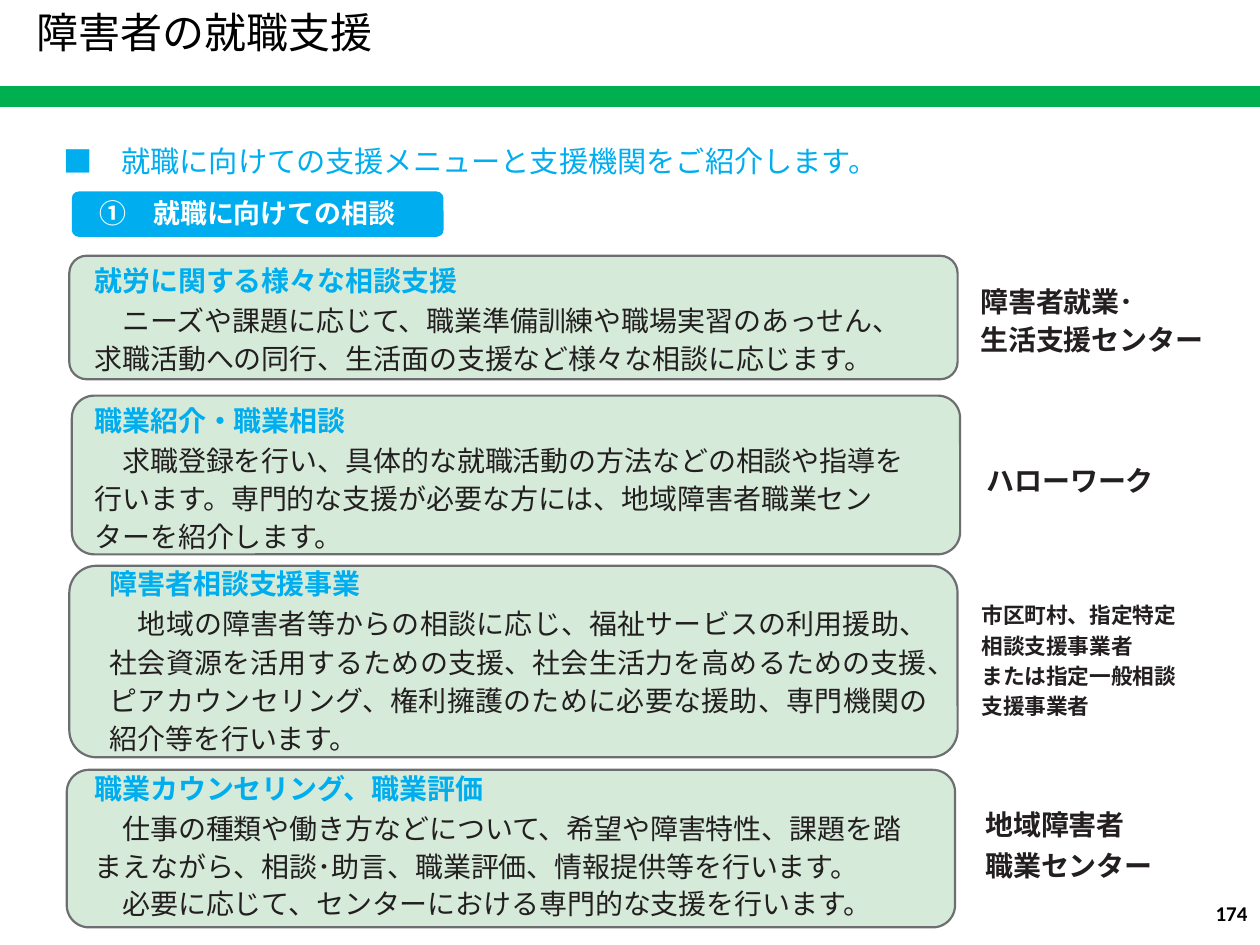
from lxml import etree
from pptx import Presentation
from pptx.dml.color import RGBColor
from pptx.enum.lang import MSO_LANGUAGE_ID
from pptx.enum.shapes import MSO_SHAPE
from pptx.enum.text import MSO_ANCHOR, MSO_AUTO_SIZE, PP_ALIGN
from pptx.oxml.ns import qn
from pptx.util import Inches, Pt

RECT, ROUND = MSO_SHAPE.RECTANGLE, MSO_SHAPE.ROUNDED_RECTANGLE
LEFT, RIGHT, JUSTIFY = PP_ALIGN.LEFT, PP_ALIGN.RIGHT, PP_ALIGN.JUSTIFY
TOP, GROW = MSO_ANCHOR.TOP, MSO_AUTO_SIZE.SHAPE_TO_FIT_TEXT
JAPANESE = MSO_LANGUAGE_ID.JAPANESE
FONT = "Noto Sans CJK JP"
BLUE, GREEN, PALE, GRAY, INK = "00AEEF", "00B050", "D5EAD8", "6D6E71", "231F20"

# Panels: box, text box, alignment, heading, body paragraphs
PANELS = [
    ((0.55, 2.03, 7.05, 0.98), (0.74, 2.03, 6.62, 0.96), LEFT,
     "就労に関する様々な相談支援",
     ["　ニーズや課題に応じて、職業準備訓練や職場実習のあっせん、求職活動への同行、"
      "生活面の支援など様々な相談に応じます。"]),
    ((0.57, 3.14, 7.05, 1.26), (0.74, 3.14, 6.51, 1.26), LEFT,
     "職業紹介・職業相談",
     ["　求職登録を行い、具体的な就職活動の方法などの相談や指導を行います。"
      "専門的な支援が必要な方には、地域障害者職業センターを紹介します。"]),
    ((0.55, 4.49, 7.05, 1.52), (0.86, 4.44, 6.51, 1.57), JUSTIFY,
     "障害者相談支援事業",
     ["　地域の障害者等からの相談に応じ、福祉サービスの利用援助、"
      "社会資源を活用するための支援、社会生活力を高めるための支援、"
      "ピアカウンセリング、権利擁護のために必要な援助、専門機関の紹介等を行います。"]),
    ((0.53, 6.11, 7.05, 1.25), (0.74, 6.06, 6.51, 1.25), LEFT,
     "職業カウンセリング、職業評価",
     ["　仕事の種類や働き方などについて、希望や障害特性、課題を踏まえながら、"
      "相談･助言、職業評価、情報提供等を行います。",
      "　必要に応じて、センターにおける専門的な支援を行います。"]),
]

# Agencies: text box, top inset, size, line spacing, (line, space before)
AGENCIES = [
    ((7.77, 2.22, 1.91, 0.61), 0.04, 16, 1,
     [("障害者就業･", 3.2), ("生活支援センター", 2.3)]),
    ((7.82, 3.67, 1.67, 0.28), 0.01, 16, 1, [("ハローワーク", 0.9)]),
    ((7.78, 4.73, 1.86, 0.99), 0.01, 12.4, 1.16,
     [("市区町村、指定特定", 0.9), ("相談支援事業者", 0.9),
      ("または指定一般相談", 0), ("支援事業者", 0)]),
    ((7.81, 6.36, 1.67, 0.65), 0.01, 16, 1.16,
     [("地域障害者", 0.9), ("職業センター", 0.9)]),
]


def color(value):
    return RGBColor.from_string(value)


def place(sp, box):
    sp.left, sp.top, sp.width, sp.height = map(Inches, box)


def add_box(s, kind, box, fill, line=None, width=1, radius=None):
    sp = s.shapes.add_shape(kind, *map(Inches, box))
    sp.shadow.inherit = False
    sp.fill.solid()
    sp.fill.fore_color.rgb = color(fill)
    if line:
        sp.line.color.rgb = color(line)
        sp.line.width = Pt(width)
    else:
        sp.line.fill.background()
    if radius is not None:
        sp.adjustments[0] = radius


def setup_frame(sp, top=0.01):
    tf = sp.text_frame
    tf.word_wrap = True
    tf.auto_size = GROW
    tf.vertical_anchor = TOP
    tf.margin_left = tf.margin_right = tf.margin_bottom = 0
    tf.margin_top = Inches(top)
    return tf


def add_text_box(s, box, top=0.01):
    return setup_frame(s.shapes.add_textbox(*map(Inches, box)), top)


def add_line(tf, text, size, rgb, bold=False, before=0, spacing=1,
             indent=0.01, align=LEFT, font=FONT):
    p = tf.paragraphs[0]
    if p.runs:
        p = tf.add_paragraph()
    p.alignment = align
    p.space_before = Pt(before)
    p.line_spacing = spacing
    # Plain indent, no bullet
    pPr = p._p.get_or_add_pPr()
    pPr.set("marL", str(Inches(indent)))
    pPr.set("indent", "0")
    etree.SubElement(pPr, qn("a:buNone"))
    r = p.add_run()
    r.text = text
    r.font.name = font
    r.font.size = Pt(size)
    r.font.bold = bold
    r.font.color.rgb = color(rgb)
    r.font.language_id = JAPANESE
    # East Asian typeface follows the Latin one
    etree.SubElement(r._r.get_or_add_rPr(), qn("a:ea"), typeface=font)


def add_panel(s, box, text_box, align, heading, body):
    add_box(s, ROUND, box, PALE, GRAY, 1.25, 0.141)
    tf = add_text_box(s, text_box, 0.06)
    add_line(tf, heading, 16, BLUE, True, 4.3)
    add_line(tf, body[0], 16, INK, before=1, spacing=1.14, align=align)
    for text in body[1:]:
        add_line(tf, text, 16, INK, before=2.1)


def add_agency(s, box, top, size, spacing, lines):
    tf = add_text_box(s, box, top)
    for text, before in lines:
        add_line(tf, text, size, INK, True, before, spacing)


def main():
    prs = Presentation()
    prs.slide_width, prs.slide_height = Inches(10), Inches(7.5)
    s = prs.slides.add_slide(prs.slide_layouts[1])

    # Title and green rule
    title, intro = s.shapes.title, s.placeholders[1]
    place(title, (0.28, 0.04, 4.06, 0.42))
    add_line(setup_frame(title), "障害者の就職支援", 24, "000000", before=1)
    add_box(s, RECT, (0, 0.69, 10, 0.15), GREEN, GREEN)

    # Support menu
    for panel in PANELS:
        add_panel(s, *panel)
    for agency in AGENCIES:
        add_agency(s, *agency)

    # Introduction, its second line in front of the blue tag
    add_box(s, ROUND, (0.57, 1.52, 2.95, 0.36), BLUE, radius=0.15)
    s.shapes._spTree.append(intro._element)
    place(intro, (0.49, 0.97, 7.25, 0.85))
    tf = setup_frame(intro, 0.17)
    add_line(tf, "■　就職に向けての支援メニューと支援機関をご紹介します。",
             16.7, BLUE, before=12.4)
    add_line(tf, "①　就職に向けての相談", 15.4, "FFFFFF", True, 10.3, indent=0.3)

    # Page number
    tf = add_text_box(s, (6.89, 7.1, 3.01, 0.4), 0.05)
    add_line(tf, "174", 12, "000000", True, align=RIGHT, font="Calibri")

    prs.save("out.pptx")


if __name__ == "__main__":
    main()
